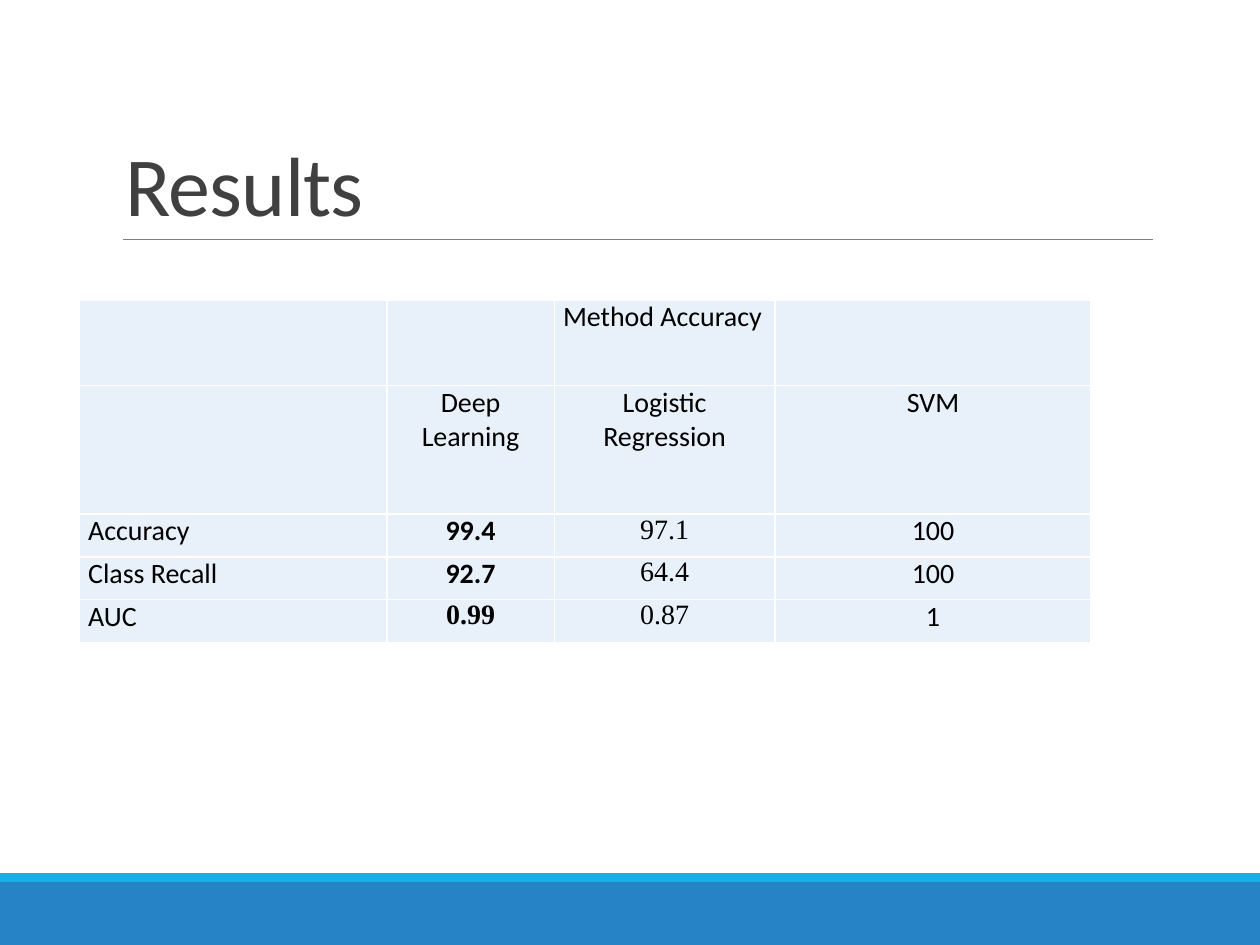
from dataclasses import dataclass

import pptx
import pptx.dml.color
import pptx.enum.shapes
import pptx.enum.text
import pptx.oxml
import pptx.oxml.ns
import pptx.util
from pptx.util import Inches

SANS, SERIF = "Calibri", "Times New Roman"
CELL_FILL, CELL_BORDER = "E8F1FA", "FFFFFF"
COLUMN_WIDTHS = [2.44, 1.33, 1.75, 2.51]
ROW_HEIGHTS = [0.68, 1.02, 0.34, 0.34, 0.34]


@dataclass
class Entry:
    text: str = ""
    centred: bool = True
    bold: bool = False
    font: str = SANS


@dataclass
class Band:
    top: float
    height: float
    colour: str


def label(text: str) -> Entry:
    return Entry(text, centred=False)


RESULTS = [
    [Entry(), Entry(), label("Method Accuracy"), Entry()],
    [Entry(), Entry("Deep Learning"), Entry("Logistic Regression"), Entry("SVM")],
    [label("Accuracy"), Entry("99.4", bold=True), Entry("97.1", font=SERIF), Entry("100")],
    [label("Class Recall"), Entry("92.7", bold=True), Entry("64.4", font=SERIF), Entry("100")],
    [label("AUC"), Entry("0.99", bold=True, font=SERIF), Entry("0.87", font=SERIF), Entry("1")],
]
FOOTER_BANDS = [Band(7, 0.5, "2683C6"), Band(6.93, 0.07, "1CADE4")]


def rgb(colour: str) -> pptx.dml.color.RGBColor:
    return pptx.dml.color.RGBColor.from_string(colour)


def draw_band(slide, band: Band) -> None:
    strip = slide.shapes.add_shape(
        pptx.enum.shapes.MSO_SHAPE.RECTANGLE,
        Inches(0), Inches(band.top), Inches(10), Inches(band.height))
    strip.shadow.inherit = False
    strip.fill.solid()
    strip.fill.fore_color.rgb = rgb(band.colour)
    strip.line.fill.background()


def draw_title_rule(slide) -> None:
    rule = slide.shapes.add_connector(
        pptx.enum.shapes.MSO_CONNECTOR.STRAIGHT,
        Inches(0.98), Inches(1.9), Inches(9.15), Inches(1.9))
    rule.line.color.rgb = rgb("808080")
    rule.line.width = pptx.util.Pt(0.5)
    rule._element.spPr.append(pptx.oxml.parse_xml(
        f"<a:effectLst {pptx.oxml.ns.nsdecls('a')}/>"))


def draw_title(slide, text: str) -> None:
    title = slide.shapes.add_textbox(
        Inches(0.9), Inches(0.31), Inches(8.25), Inches(1.59))
    frame = title.text_frame
    frame.word_wrap = True
    frame.vertical_anchor = pptx.enum.text.MSO_ANCHOR.BOTTOM
    paragraph = frame.paragraphs[0]
    paragraph.line_spacing = 0.85
    paragraph.font.size = pptx.util.Pt(48)
    paragraph.font.name = SANS
    paragraph.font.color.rgb = rgb("404040")
    run = paragraph.add_run()
    run.text = text
    run._r.get_or_add_rPr().set("spc", "-50")


def set_borders(cell, colour: str) -> None:
    properties = cell._tc.get_or_add_tcPr()
    for position, side in enumerate(("lnL", "lnR", "lnT", "lnB")):
        properties.insert(position, pptx.oxml.parse_xml(
            f"<a:{side} {pptx.oxml.ns.nsdecls('a')} w='12700'><a:solidFill>"
            f"<a:srgbClr val='{colour}'/></a:solidFill></a:{side}>"))


def fill_cell(cell, entry: Entry) -> None:
    cell.fill.solid()
    cell.fill.fore_color.rgb = rgb(CELL_FILL)
    set_borders(cell, CELL_BORDER)
    if not entry.text:
        return
    cell.margin_left = cell.margin_right = Inches(0.07)
    cell.margin_top = cell.margin_bottom = Inches(0)
    paragraph = cell.text_frame.paragraphs[0]
    paragraph.text = entry.text
    paragraph.space_before = pptx.util.Pt(2)
    if entry.centred:
        paragraph.alignment = pptx.enum.text.PP_ALIGN.CENTER
    paragraph.font.size = pptx.util.Pt(16)
    paragraph.font.name = entry.font
    paragraph.font.bold = entry.bold
    paragraph.font.color.rgb = rgb("000000")


def draw_results(slide) -> None:
    results = slide.shapes.add_table(
        len(ROW_HEIGHTS), len(COLUMN_WIDTHS), Inches(0.63), Inches(2.38),
        Inches(sum(COLUMN_WIDTHS)), Inches(sum(ROW_HEIGHTS))).table
    results.first_row = results.horz_banding = False
    for column, width in zip(results.columns, COLUMN_WIDTHS):
        column.width = Inches(width)
    for row, height, entries in zip(results.rows, ROW_HEIGHTS, RESULTS):
        row.height = Inches(height)
        for cell, entry in zip(row.cells, entries):
            fill_cell(cell, entry)


def main() -> None:
    presentation = pptx.Presentation()
    presentation.slide_width = Inches(10)
    presentation.slide_height = Inches(7.5)
    slide = presentation.slides.add_slide(presentation.slide_layouts[6])

    # Footer bands
    for band in FOOTER_BANDS:
        draw_band(slide, band)

    # Title and its rule
    draw_title_rule(slide)
    draw_title(slide, "Results")

    # Results table
    draw_results(slide)

    presentation.save("out.pptx")


if __name__ == "__main__":
    main()
